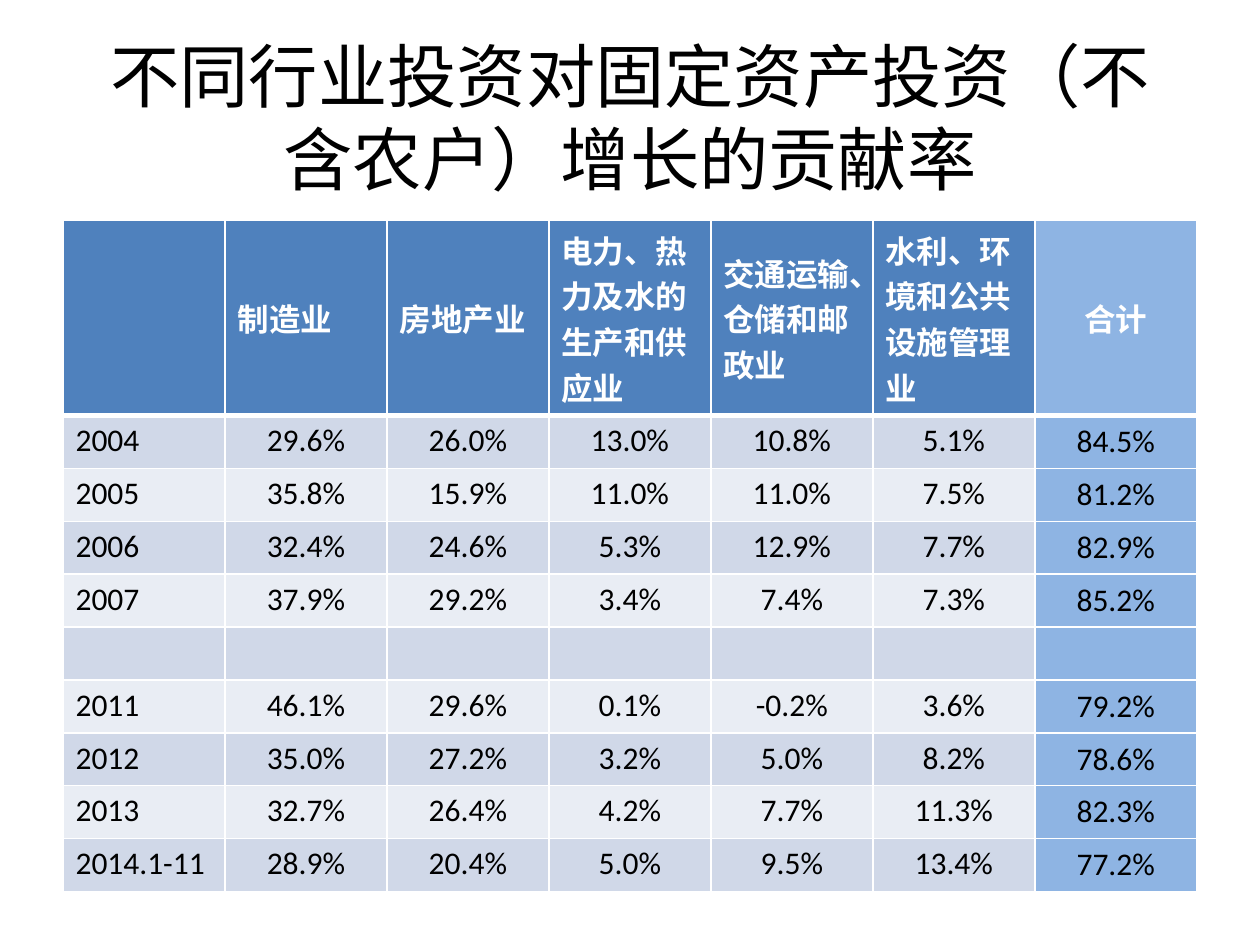
import pptx
import pptx.dml.color
import pptx.enum.text
import pptx.oxml
import pptx.oxml.ns
import pptx.util

Inches = pptx.util.Inches
Pt = pptx.util.Pt
Align = pptx.enum.text.PP_ALIGN
Anchor = pptx.enum.text.MSO_ANCHOR

TITLE = "不同行业投资对固定资产投资（不含农户）增长的贡献率"
HEADS = ["", "制造业", "房地产业", "电力、热力及水的生产和供应业",
         "交通运输、仓储和邮政业", "水利、环境和公共设施管理业", "合计"]
RATES = [
    ["2004", "29.6%", "26.0%", "13.0%", "10.8%", "5.1%", "84.5%"],
    ["2005", "35.8%", "15.9%", "11.0%", "11.0%", "7.5%", "81.2%"],
    ["2006", "32.4%", "24.6%", "5.3%", "12.9%", "7.7%", "82.9%"],
    ["2007", "37.9%", "29.2%", "3.4%", "7.4%", "7.3%", "85.2%"],
    [""] * 7,
    ["2011", "46.1%", "29.6%", "0.1%", "-0.2%", "3.6%", "79.2%"],
    ["2012", "35.0%", "27.2%", "3.2%", "5.0%", "8.2%", "78.6%"],
    ["2013", "32.7%", "26.4%", "4.2%", "7.7%", "11.3%", "82.3%"],
    ["2014.1-11", "28.9%", "20.4%", "5.0%", "9.5%", "13.4%", "77.2%"],
]


def color(code):
    return pptx.dml.color.RGBColor.from_string(code)


class Deck:
    font = "Calibri"
    ink, white = "000000", "FFFFFF"
    head, total = "4F81BD", "8EB4E3"
    bands = ["D0D8E8", "E9EDF4"]

    def __init__(self, show):
        self.slide = show.slides.add_slide(show.slide_layouts[5])

    def text(self, par, words, size, ink, bold=False):
        run = par.add_run()
        run.text = words
        run.font.name = self.font
        run.font.size = Pt(size)
        run.font.bold = bold
        run.font.color.rgb = color(ink)

    def title(self, words, left, top, width, height):
        box = self.slide.shapes.title
        box.left, box.top = Inches(left), Inches(top)
        box.width, box.height = Inches(width), Inches(height)
        frame = box.text_frame
        frame.word_wrap = True
        frame.vertical_anchor = Anchor.MIDDLE
        par = frame.paragraphs[0]
        par.alignment = Align.CENTER
        self.text(par, words, 39.6, self.ink)

    def border(self, cell, top, bottom):
        """Draw white cell edges; top and bottom are widths in points."""
        props = cell._tc.get_or_add_tcPr()
        edges = [("lnL", 1), ("lnR", 1), ("lnT", top), ("lnB", bottom)]
        for spot, (tag, size) in enumerate(edges):
            line = pptx.oxml.parse_xml(
                f'<a:{tag} {pptx.oxml.ns.nsdecls("a")} w="{Pt(size)}">'
                f'<a:solidFill><a:srgbClr val="{self.white}"/></a:solidFill>'
                f'</a:{tag}>')
            props.insert(spot, line)

    def cell(self, cell, words, row, col, last):
        head, total = row == 0, col == last
        band = self.head if head else self.bands[(row - 1) % 2]
        cell.fill.solid()
        cell.fill.fore_color.rgb = color(self.total if total else band)
        cell.vertical_anchor = Anchor.MIDDLE if head or total else Anchor.TOP
        self.border(cell, 3 if row == 1 else 1, 3 if head else 1)
        par = cell.text_frame.paragraphs[0]
        left = col == 0 or (head and not total)
        par.alignment = Align.LEFT if left else Align.CENTER
        if words:
            self.text(par, words, 18, self.white if head else self.ink, head)

    def table(self, rows, left, top, width, tall, low):
        """Add a table with a header row of height tall, others low."""
        count = len(rows[0])
        high = tall + low * (len(rows) - 1)
        grid = self.slide.shapes.add_table(
            len(rows), count, Inches(left), Inches(top),
            Inches(width), Inches(high)).table
        for r, row in enumerate(rows):
            grid.rows[r].height = Inches(low if r else tall)
            for c, words in enumerate(row):
                self.cell(grid.cell(r, c), words, r, c, count - 1)


def main():
    show = pptx.Presentation()
    show.slide_width, show.slide_height = Inches(10), Inches(7.5)
    deck = Deck(show)
    deck.title(TITLE, 0.5, 0.3, 9, 1.25)
    deck.table([HEADS] + RATES, 0.5, 1.75, 9, 1.35, 0.42)
    show.save("out.pptx")


if __name__ == "__main__":
    main()
